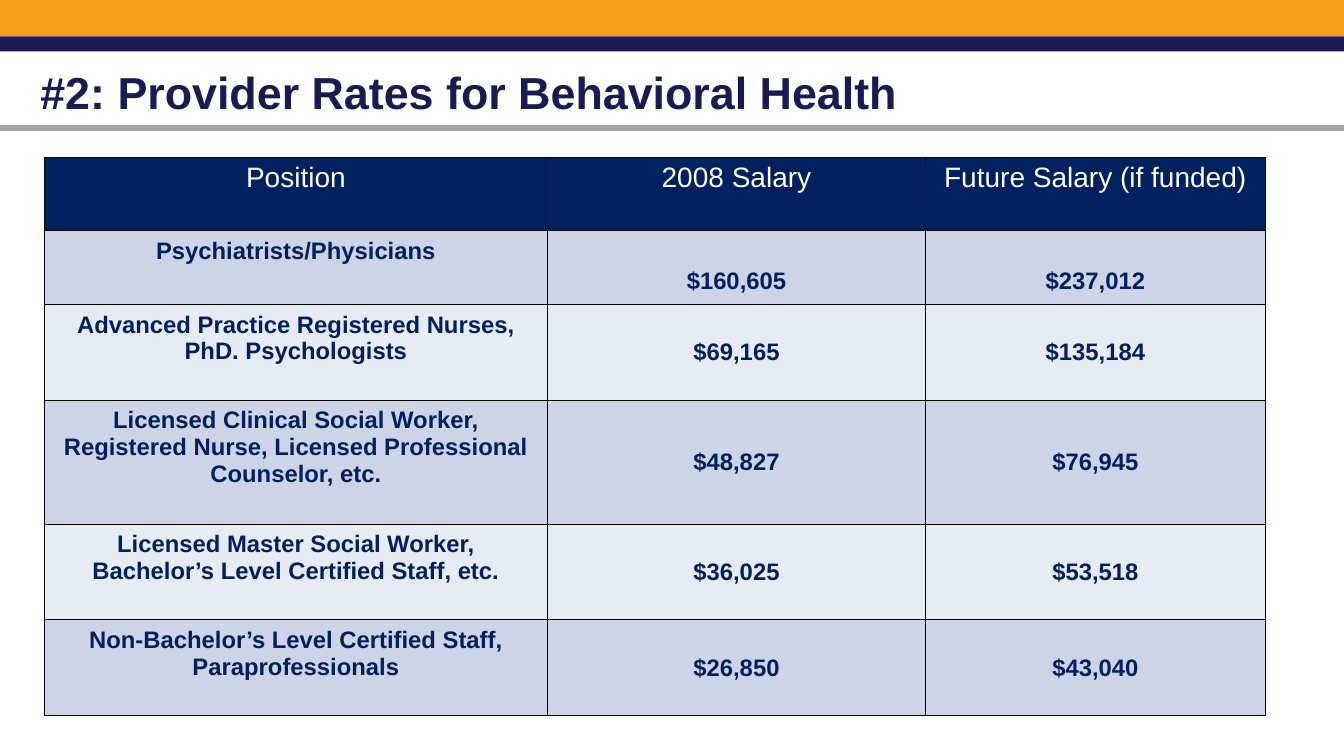
from pptx import Presentation
from pptx.dml.color import RGBColor as Rgb
from pptx.enum.shapes import MSO_SHAPE as Shape
from pptx.enum.text import MSO_ANCHOR as Anchor, PP_ALIGN as Align
from pptx.oxml import parse_xml
from pptx.util import Inches, Pt

title = "#2: Provider Rates for Behavioral Health"
rows = [
    ("Position", "2008 Salary", "Future Salary (if funded)"),
    ("Psychiatrists/Physicians", "$160,605", "$237,012"),
    ("Advanced Practice Registered Nurses, PhD. Psychologists", "$69,165", "$135,184"),
    ("Licensed Clinical Social Worker, Registered Nurse, Licensed Professional Counselor, etc.",
     "$48,827", "$76,945"),
    ("Licensed Master Social Worker, Bachelor’s Level Certified Staff, etc.", "$36,025", "$53,518"),
    ("Non-Bachelor’s Level Certified Staff, Paraprofessionals", "$26,850", "$43,040"),
]
wide = [4.99, 3.75, 3.37]
high = [0.73, 0.73, 0.95, 1.23, 0.95, 0.95]
theme = {
    "font": "Arial", "title": 32, "head": 20, "body": 17,
    "orange": "F89C1B", "navy": "1D1953", "gray": "A5A5A5",
    "blue": "002060", "white": "FFFFFF", "line": "000000",
    "bands": ("E7EBF3", "CCD4E5"),
}
bars = [("orange", 0, 0.36), ("navy", 0.36, 0.15), ("gray", 1.24, 0.06)]
SPACE = "http://schemas.openxmlformats.org/drawingml/2006/main"


def style(para, size, color, bold):
    for run in para.runs:
        font = run.font
        font.name = theme["font"]
        font.size = Pt(size)
        font.bold = bold
        font.color.rgb = Rgb.from_string(color)


def border(cell):
    props = cell._tc.get_or_add_tcPr()
    for spot, side in enumerate(("lnL", "lnR", "lnT", "lnB")):
        props.insert(spot, parse_xml(
            f'<a:{side} xmlns:a="{SPACE}" w="{Pt(1)}"><a:solidFill>'
            f'<a:srgbClr val="{theme["line"]}"/></a:solidFill></a:{side}>'))


def fill_cell(cell, text, row, col):
    head = row == 0
    cell.text_frame.text = text
    para = cell.text_frame.paragraphs[0]
    para.alignment = Align.CENTER
    style(para, theme["head" if head else "body"],
          theme["white" if head else "blue"], not head)
    cell.fill.solid()
    cell.fill.fore_color.rgb = Rgb.from_string(
        theme["blue"] if head else theme["bands"][row % 2])
    if head or col == 0:
        cell.vertical_anchor = Anchor.TOP
    else:
        cell.vertical_anchor = Anchor.BOTTOM if row == 1 else Anchor.MIDDLE
    cell.margin_top = Inches(0.07 if col == 0 and not head else 0.05)
    cell.margin_bottom = Inches(0.1 if row == 1 else 0.05)
    border(cell)


def main():
    deck = Presentation()
    deck.slide_width, deck.slide_height = Inches(13.33), Inches(7.5)
    slide = deck.slides.add_slide(deck.slide_layouts[6])
    shapes = slide.shapes

    for color, top, tall in bars:
        bar = shapes.add_shape(Shape.RECTANGLE, 0, Inches(top), deck.slide_width, Inches(tall))
        bar.shadow.inherit = False
        bar.fill.solid()
        bar.fill.fore_color.rgb = Rgb.from_string(theme[color])
        bar.line.fill.background()

    box = shapes.add_textbox(Inches(0.21), Inches(0.6), Inches(13.02), Inches(0.62))
    frame = box.text_frame
    frame.word_wrap = True
    frame.vertical_anchor = Anchor.MIDDLE
    frame.margin_left = Inches(0.19)
    frame.margin_top = frame.margin_right = frame.margin_bottom = 0
    frame.text = title
    style(frame.paragraphs[0], theme["title"], theme["navy"], True)

    table = shapes.add_table(len(rows), len(wide), Inches(0.44), Inches(1.56),
                             Inches(sum(wide)), Inches(sum(high))).table
    for col, size in enumerate(wide):
        table.columns[col].width = Inches(size)
    for row, texts in enumerate(rows):
        table.rows[row].height = Inches(high[row])
        for col, text in enumerate(texts):
            fill_cell(table.cell(row, col), text, row, col)

    deck.save("out.pptx")


if __name__ == "__main__":
    main()
